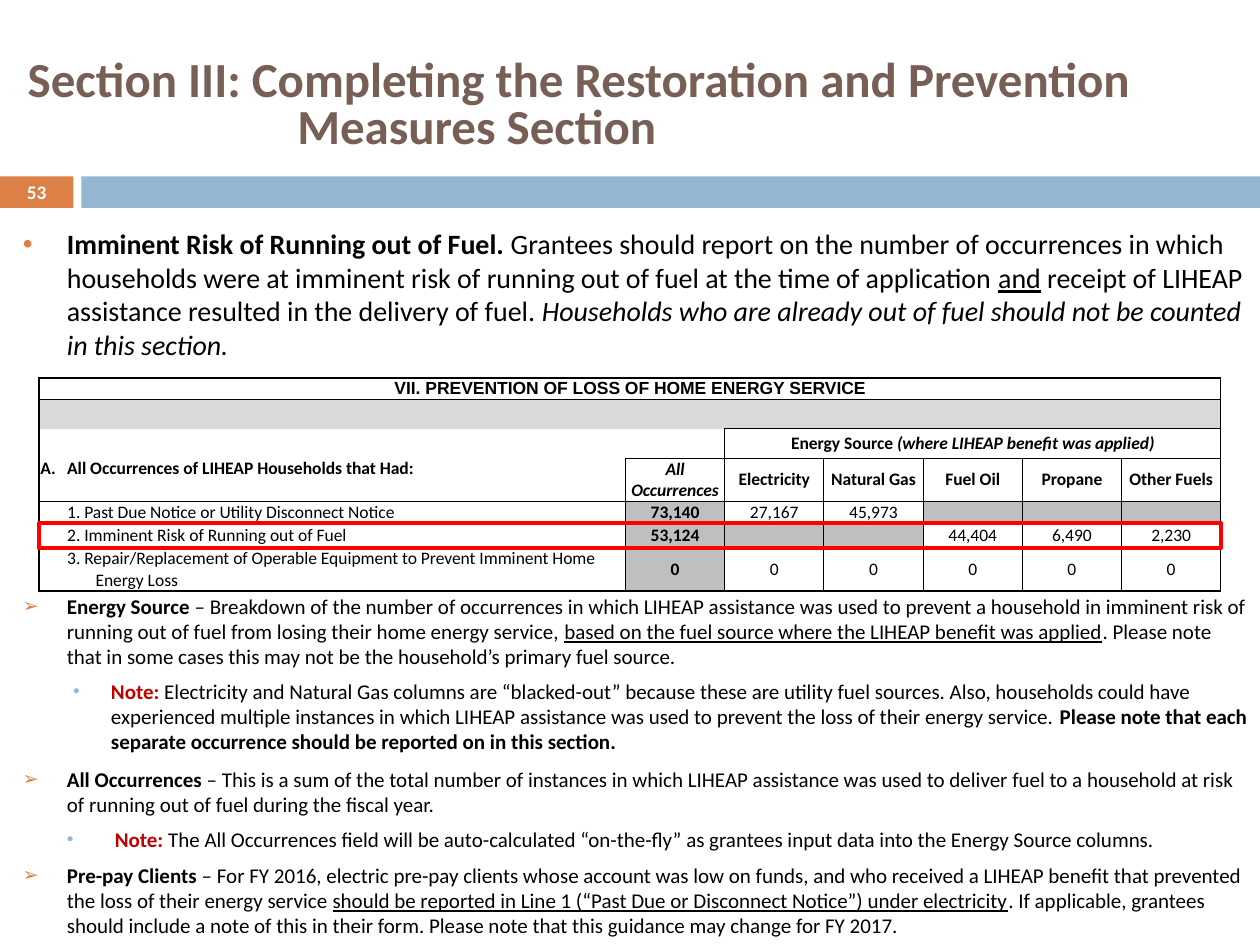
from lxml.etree import SubElement
from pptx import Presentation
from pptx.dml.color import RGBColor
from pptx.enum.shapes import MSO_SHAPE
from pptx.enum.text import MSO_ANCHOR, MSO_AUTO_SIZE, PP_ALIGN
from pptx.oxml import parse_xml
from pptx.oxml.ns import nsdecls, qn
from pptx.util import Pt

BOLD = {"bold": True}
ITALIC = {"italic": True}
UNDERLINE = {"underline": True}
NOTE = {"bold": True, "color": "C00000"}


def write(paragraph, runs, size, color="000000", font="Calibri"):
    for words, look in runs:
        run = paragraph.add_run()
        run.text = words
        values = {"name": font, "size": Pt(size), "bold": False, "italic": False, "color": color} | look
        run.font.color.rgb = RGBColor.from_string(values.pop("color"))
        for name, value in values.items():
            setattr(run.font, name, value)


def indent(paragraph, left, first):
    properties = paragraph._p.get_or_add_pPr()
    properties.set("marL", str(Pt(left)))
    properties.set("indent", str(Pt(first)))
    return properties


prs = Presentation()
prs.slide_width, prs.slide_height = Pt(720), Pt(540)
slide = prs.slides.add_slide(prs.slide_layouts[1])
title, body = slide.placeholders

for left, width, color in [(0, 42, "DD8047"), (46.5, 673.5, "94B6D2")]:
    band = slide.shapes.add_shape(MSO_SHAPE.RECTANGLE, Pt(left), Pt(100.8), Pt(width), Pt(18))
    band.shadow.inherit = False
    band.fill.solid()
    band.fill.fore_color.rgb = RGBColor.from_string(color)
    band.line.fill.background()

title.left, title.top, title.width, title.height = Pt(0), Pt(22.3), Pt(720), Pt(77.8)
title.text_frame.auto_size = MSO_AUTO_SIZE.NONE
title.text_frame.vertical_anchor = MSO_ANCHOR.MIDDLE
heading = title.text_frame.paragraphs[0]
heading.alignment = PP_ALIGN.LEFT
heading.line_spacing = 0.8
indent(heading, 162.7, -154.1)
write(heading, [("Section III: Completing the Restoration and Prevention Measures Section", BOLD)], 28, "775F55")

page_number = slide.shapes.add_textbox(Pt(0), Pt(100.1), Pt(42), Pt(19.4)).text_frame
page_number.word_wrap = True
page_number.vertical_anchor = MSO_ANCHOR.MIDDLE
page_number.paragraphs[0].alignment = PP_ALIGN.CENTER
write(page_number.paragraphs[0], [("53", BOLD)], 11, "FFFFFF")

guidance = [
    (0, 25.2, -25.2, 7, "•", 100, 16, [
        ("Imminent Risk of Running out of Fuel. ", BOLD),
        ("Grantees should report on the number of occurrences in which households were at imminent risk of running out of fuel at the time of application ", {}),
        ("and", UNDERLINE),
        (" receipt of LIHEAP assistance resulted in the delivery of fuel. ", {}),
        ("Households who are already out of fuel should not be counted in this section.", ITALIC)]),
    (0, 25.2, -25.2, 132.7, "➢", 90, 12, [
        ("Energy Source ", BOLD),
        ("– Breakdown of the number of occurrences in which LIHEAP assistance was used to prevent a household in imminent risk of running out of fuel from losing their home energy service, ", {}),
        ("based on the fuel source where the LIHEAP benefit was applied", UNDERLINE),
        (". Please note that in some cases this may not be the household’s primary fuel source.", {})]),
    (1, 50.4, -21.6, 5.5, "•", 90, 12, [
        ("Note: ", NOTE),
        ("Electricity and Natural Gas columns are “blacked-out” because these are utility fuel sources. Also, households could have experienced multiple instances in which LIHEAP assistance was used to prevent the loss of their energy service. ", {}),
        ("Please note that each separate occurrence should be reported on in this section.", BOLD)]),
    (0, 25.2, -25.2, 7, "➢", 90, 12, [
        ("All Occurrences ", BOLD),
        ("– This is a sum of the total number of instances in which LIHEAP assistance was used to deliver fuel to a household at risk of running out of fuel during the fiscal year.", {})]),
    (1, 52.6, -27.4, 5.5, "•", 90, 12, [
        ("Note: ", NOTE),
        ("The All Occurrences field will be auto-calculated “on-the-fly” as grantees input data into the Energy Source columns.", {})]),
    (0, 25.2, -25.2, 6, "➢", 90, 12, [
        ("Pre-pay Clients ", BOLD),
        ("– For FY 2016, electric pre-pay clients whose account was low on funds, and who received a LIHEAP benefit that prevented the loss of their energy service ", {}),
        ("should be reported in Line 1 (“Past Due or Disconnect Notice”) under electricity", UNDERLINE),
        (". If applicable, grantees should include a note of this in their form. Please note that this guidance may change for FY 2017.", {})]),
]
body.left, body.top, body.width, body.height = Pt(5.8), Pt(126), Pt(714.2), Pt(414)
body.text_frame.auto_size = MSO_AUTO_SIZE.NONE
for order, (level, left, first, gap, bullet, bullet_size, size, runs) in enumerate(guidance):
    point = body.text_frame.add_paragraph() if order else body.text_frame.paragraphs[0]
    point.level = level
    point.space_before = Pt(gap)
    properties = indent(point, left, first)
    bullet_color = SubElement(properties, qn("a:buClr"))
    SubElement(bullet_color, qn("a:srgbClr"), val="94B6D2" if level else "DD8047")
    SubElement(properties, qn("a:buSzPct"), val=str(bullet_size * 1000))
    SubElement(properties, qn("a:buFont"), typeface="Arial")
    SubElement(properties, qn("a:buChar"), char=bullet)
    write(point, runs, size)

occurrences = [
    ["VII. PREVENTION OF LOSS OF HOME ENERGY SERVICE"] + [""] * 6,
    [""] * 7,
    ["", "", "Energy Source ", "", "", "", ""],
    ["A.\tAll Occurrences of LIHEAP Households that Had:", "All Occurrences", "Electricity", "Natural Gas", "Fuel Oil", "Propane", "Other Fuels"],
    ["1. Past Due Notice or Utility Disconnect Notice", "73,140", "27,167", "45,973", "", "", ""],
    ["2. Imminent Risk of Running out of Fuel", "53,124", "", "", "44,404", "6,490", "2,230"],
    ["3. Repair/Replacement of Operable Equipment to Prevent Imminent Home Energy Loss"] + ["0"] * 6,
]
table_left, table_top, table_width = 22.4, 216, 675.2
row_heights = [12.5, 16.6, 16.8, 24.6, 12.4, 14.4, 24.6]
table = slide.shapes.add_table(7, 7, Pt(table_left), Pt(table_top), Pt(table_width), Pt(sum(row_heights))).table
table.first_row = table.horz_banding = False
for row, height in enumerate(row_heights):
    table.rows[row].height = Pt(height)
for col in range(7):
    table.columns[col].width = Pt(56.7 if col else 335)
spans = [(0, 0), (1, 2), (2, 2)]
for row, start in spans:
    table.cell(row, start).merge(table.cell(row, 6))

for row, entries in enumerate(occurrences):
    for col, entry in enumerate(entries):
        cell = table.cell(row, col)
        margins = {"margin_left": 0.72, "margin_right": 0.72, "margin_top": 0, "margin_bottom": 0}
        for name, value in margins.items():
            setattr(cell, name, Pt(value))
        cell.vertical_anchor = MSO_ANCHOR.TOP if (row, col) == (3, 0) else MSO_ANCHOR.MIDDLE
        line = cell.text_frame.paragraphs[0]
        if entry:
            look = {"bold": row < 4 or col == 1, "italic": (row, col) == (3, 1)}
            runs = [(entry, look)]
            if row == 2:
                runs.append(("(where LIHEAP benefit was applied)", BOLD | ITALIC))
            write(line, runs, 10, font="Calibri" if row else "Arial")
        else:
            SubElement(line._p, qn("a:endParaRPr"), sz="1000")
        if col or row == 0:
            line.alignment = PP_ALIGN.CENTER
        elif row == 3:
            indent(line, 15.3, -15.3)
        elif row > 3:
            indent(line, 31.5, -16.2)

        if row == 1 or (row > 3 and (col == 1 or not entry)):
            cell.fill.solid()
            cell.fill.fore_color.rgb = RGBColor.from_string("D9D9D9" if row == 1 else "BFBFBF")
        else:
            cell.fill.background()

        right_end = col == 6 or (row, col) in spans
        edges = [
            ("lnL", col == 0, col > 0 and row < 3 and (row, col) != (2, 2)),
            ("lnR", right_end, not right_end and row < 3 and (row, col) != (2, 1)),
            ("lnT", row == 0, (row == 2 and col < 2) or (row, col) == (3, 0)),
            ("lnB", row == 6, (row == 1 and col < 2) or (row, col) == (2, 0)),
        ]
        dotted = [(4, "lnB"), (5, "lnT"), (5, "lnB"), (6, "lnT")]
        for position, (edge, outer, hidden) in enumerate(edges):
            paint = "<a:noFill/>" if hidden else '<a:solidFill><a:srgbClr val="000000"/></a:solidFill>'
            dash = "dot" if col == 0 and (row, edge) in dotted else "solid"
            border = f'<a:{edge} {nsdecls("a")} w="{Pt(1 if outer else 0.5)}">{paint}<a:prstDash val="{dash}"/></a:{edge}>'
            cell._tc.get_or_add_tcPr().insert(position, parse_xml(border))

highlight_top = table_top + sum(row_heights[:5])
highlight = slide.shapes.add_shape(
    MSO_SHAPE.RECTANGLE, Pt(table_left), Pt(highlight_top), Pt(table_width), Pt(row_heights[5]))
highlight.shadow.inherit = False
highlight.fill.background()
highlight.line.color.rgb = RGBColor.from_string("FF0000")
highlight.line.width = Pt(2.5)

prs.save("out.pptx")
